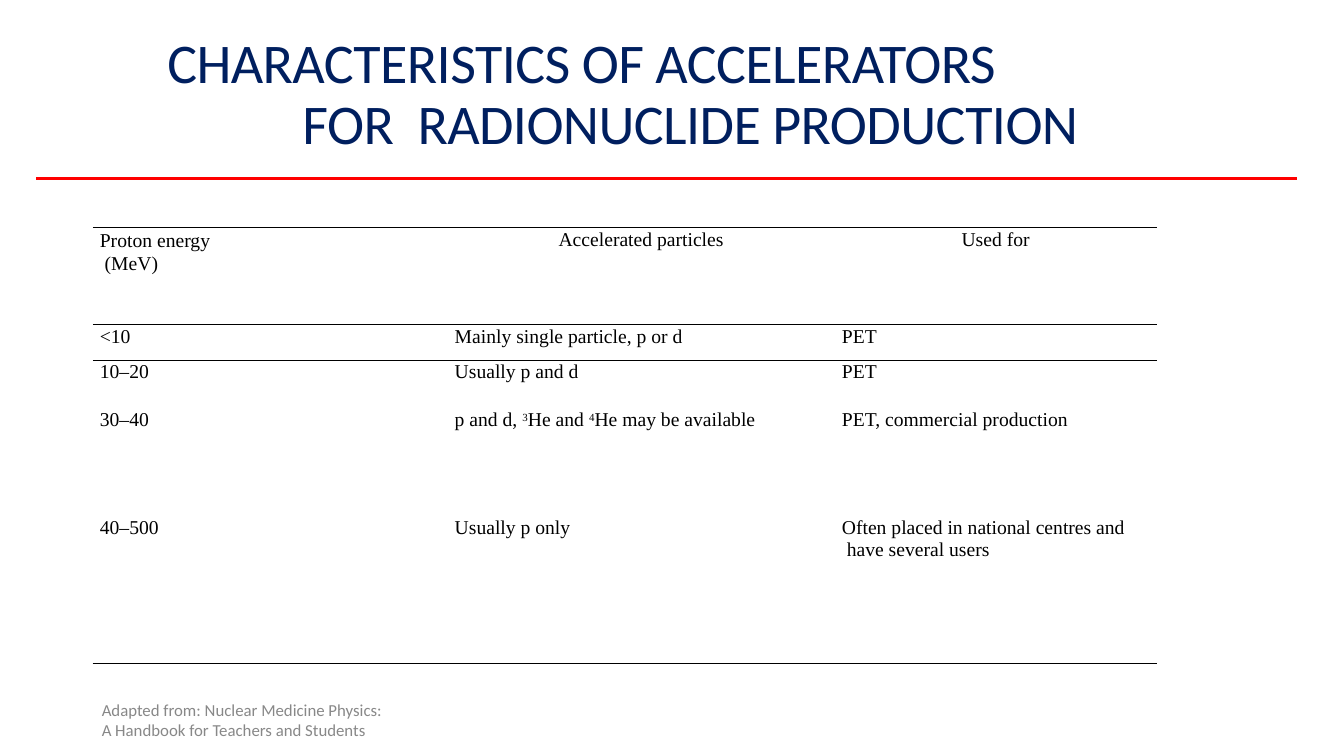
import pptx
import pptx.dml.color
import pptx.enum.shapes
import pptx.enum.text
import pptx.oxml.ns
import pptx.util
from dataclasses import dataclass
from lxml import etree

Inches, Pt = pptx.util.Inches, pptx.util.Pt

TITLE = "CHARACTERISTICS OF ACCELERATORS FOR  RADIONUCLIDE PRODUCTION"
SOURCE = ["Adapted from: Nuclear Medicine Physics:", "A Handbook for Teachers and Students"]

# "^" marks the next character as superscript; "\v" breaks the line.
HEADER = ["Proton energy\v (MeV)", "Accelerated particles", "Used for"]
ACCELERATORS = [
    ["<10", "Mainly single particle, p or d", "PET"],
    ["10–20", "Usually p and d", "PET"],
    ["30–40", "p and d, ^3He and ^4He may be available", "PET, commercial production"],
    ["40–500", "Usually p only", "Often placed in national centres and\v have several users"],
]

# Inches
COLUMN_WIDTHS = [2.38, 4.63, 3.55]
HEADER_INDENTS = [0.07, 2.24, 0.34]
BODY_INDENTS = [0.07, 1.21, 0.42]
TABLE_LEFT, TABLE_TOP, TABLE_END = 0.92, 2.26, 6.58
TABLE_RIGHT = TABLE_LEFT + sum(COLUMN_WIDTHS)

# Per row: height in inches, top inset in inches, space before in points,
# line spacing in points, ruled above, ruled below
ROWS = [
    (0.96, 0, 0, 16.4, True, True),
    (0.36, 0, 0, 16.4, True, True),
    (0.48, 0, 8, None, True, False),
    (0.72, 0, 8, None, False, False),
    (0.82, 0.35, 0, None, False, False),
]


@dataclass(frozen=True)
class Theme:
    navy: str = "001F5F"
    red: str = "FF0000"
    black: str = "000000"
    grey: str = "888888"
    sans: str = "Calibri"
    serif: str = "Times New Roman"
    title_size: float = 40
    table_size: float = 14
    superscript_size: float = 13.5
    source_size: float = 12


THEME = Theme()


def color(value):
    return pptx.dml.color.RGBColor.from_string(value)


def style(paragraph, face, size, ink, indent=0, hanging=0, line=None, before=0):
    paragraph.font.name = face
    paragraph.font.size = Pt(size)
    paragraph.font.color.rgb = color(ink)
    paragraph.space_before = Pt(before)
    if line:
        paragraph.line_spacing = Pt(line)
    properties = paragraph._p.get_or_add_pPr()
    properties.set("marL", str(Inches(indent)))
    properties.set("indent", str(Inches(hanging)))


def add_text_box(slide, left, top, width, height, top_inset=0):
    frame = slide.shapes.add_textbox(*map(Inches, (left, top, width, height))).text_frame
    frame.word_wrap = True
    frame.margin_left = frame.margin_right = frame.margin_bottom = 0
    frame.margin_top = Inches(top_inset)
    return frame


def add_rule(slide, left, right, y, ink, weight):
    rule = slide.shapes.add_connector(
        pptx.enum.shapes.MSO_CONNECTOR.STRAIGHT,
        Inches(left), Inches(y), Inches(right), Inches(y))
    rule.line.color.rgb = color(ink)
    rule.line.width = Pt(weight)
    etree.SubElement(rule._element.spPr, pptx.oxml.ns.qn("a:effectLst"))


def set_borders(cell, above, below):
    qn = pptx.oxml.ns.qn
    properties = cell._tc.get_or_add_tcPr()
    for tag, ruled in (("a:lnL", False), ("a:lnR", False), ("a:lnT", above), ("a:lnB", below)):
        border = etree.SubElement(properties, qn(tag), w=str(Pt(1)))
        if ruled:
            fill = etree.SubElement(border, qn("a:solidFill"))
            etree.SubElement(fill, qn("a:srgbClr"), val=THEME.black)
        else:
            etree.SubElement(border, qn("a:noFill"))


def write_with_superscripts(paragraph, text):
    plain, *raised = text.split("^")
    paragraph.text = plain
    for part in raised:
        superscript = paragraph.add_run()
        superscript.text = part[0]
        superscript.font.size = Pt(THEME.superscript_size)
        superscript.font._element.set("baseline", "25000")
        paragraph.add_run().text = part[1:]


def add_title(slide):
    paragraph = add_text_box(slide, 1.65, 0.25, 9.1, 1.3, 0.09).paragraphs[0]
    paragraph.text = TITLE
    style(paragraph, THEME.sans, THEME.title_size, THEME.navy, 1.35, -1.34, 43.2, 6.4)
    paragraph.runs[0].font._element.set("spc", "-40")


def add_accelerator_table(slide):
    table = slide.shapes.add_table(
        len(ROWS), len(COLUMN_WIDTHS), Inches(TABLE_LEFT), Inches(TABLE_TOP),
        Inches(sum(COLUMN_WIDTHS)), Inches(sum(row[0] for row in ROWS))).table
    table.first_row = table.horz_banding = False
    for column, width in zip(table.columns, COLUMN_WIDTHS):
        column.width = Inches(width)
    for i, (texts, row) in enumerate(zip([HEADER] + ACCELERATORS, ROWS)):
        height, inset, before, line, above, below = row
        table.rows[i].height = Inches(height)
        indents = BODY_INDENTS if i else HEADER_INDENTS
        for j, text in enumerate(texts):
            cell = table.cell(i, j)
            cell.margin_left = cell.margin_right = cell.margin_bottom = 0
            cell.margin_top = Inches(inset)
            set_borders(cell, above, below)
            cell.fill.background()
            paragraph = cell.text_frame.paragraphs[0]
            write_with_superscripts(paragraph, text)
            style(paragraph, THEME.serif, THEME.table_size, THEME.black,
                  indents[j], 0, line, before)
    table.cell(0, 0).text_frame.paragraphs[0].line_spacing = Pt(16.8)
    table.cell(0, 2).text_frame.paragraphs[0].alignment = pptx.enum.text.PP_ALIGN.CENTER


def add_source(slide):
    frame = add_text_box(slide, 1, 6.97, 2.9, 0.39)
    frame.text = "\n".join(SOURCE)
    for paragraph, line in zip(frame.paragraphs, (12.4, None)):
        style(paragraph, THEME.sans, THEME.source_size, THEME.grey, 0.01, 0, line)


def main():
    presentation = pptx.Presentation()
    presentation.slide_width, presentation.slide_height = Inches(13.33), Inches(7.5)
    slide = presentation.slides.add_slide(presentation.slide_layouts[6])
    add_title(slide)
    add_rule(slide, TABLE_LEFT, TABLE_RIGHT, TABLE_END, THEME.black, 1)
    add_accelerator_table(slide)
    add_rule(slide, 0.36, 12.86, 1.77, THEME.red, 2.52)
    add_source(slide)
    presentation.save("out.pptx")


if __name__ == "__main__":
    main()
